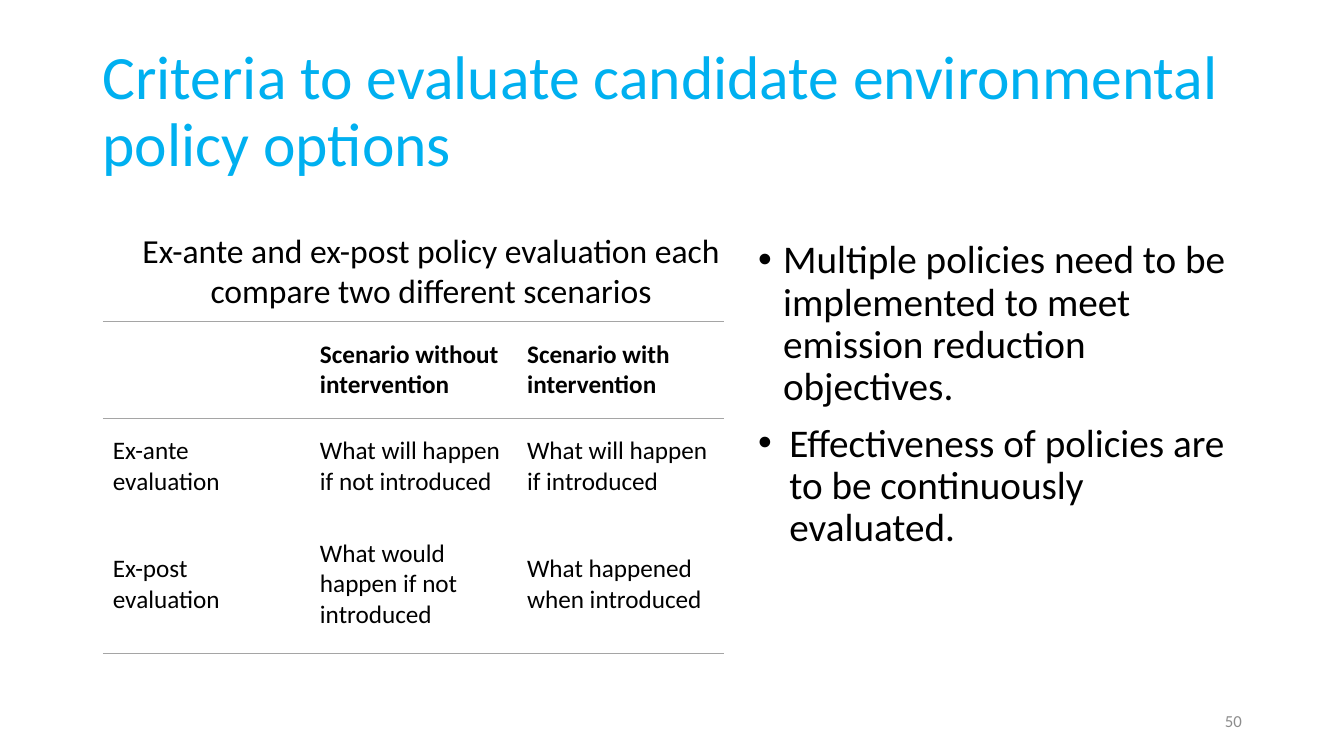
from dataclasses import dataclass

from lxml import etree
from pptx import Presentation
from pptx.dml.color import RGBColor
from pptx.enum.text import MSO_ANCHOR, MSO_AUTO_SIZE, PP_ALIGN
from pptx.oxml.ns import qn
from pptx.util import Cm, Pt

LEFT, MID, RIGHT = PP_ALIGN.LEFT, PP_ALIGN.CENTER, PP_ALIGN.RIGHT
TOP, CENTER = MSO_ANCHOR.TOP, MSO_ANCHOR.MIDDLE
FIXED = MSO_AUTO_SIZE.NONE

TITLE = "Criteria to evaluate candidate environmental policy options"
LEAD = "Ex-ante and ex-post policy evaluation each compare two different scenarios"
POINTS = [
    ("Multiple policies need to be implemented to meet emission reduction objectives.", 0.63),
    ("Effectiveness of policies are to be continuously evaluated.", 0.79),
]
GRID = [
    ("", "Scenario without intervention", "Scenario with intervention"),
    ("Ex-ante evaluation", "What will happen if not introduced", "What will happen if introduced"),
    ("Ex-post evaluation", "What would happen if not introduced", "What happened when introduced"),
]
PAGE = "50"

PLACES = {
    "title": (2.33, 1.01, 29.21, 3.68),
    "points": (18.85, 5.92, 12.67, 12.12),
    "lead": (2.33, 5.66, 17.07, 12.37),
    "page": (23.93, 17.65, 7.62, 1.02),
}
GRID_LEFT, GRID_TOP, COL_WIDTH = 2.59, 8.1, 5.22
ROW_HEIGHTS = (2.44, 2.44, 3.48)
PLAIN_STYLE = "{2D5ABB26-0587-4C30-8999-92F81FD0307C}"


@dataclass(frozen=True)
class Theme:
    font: str = "Calibri"
    blue: str = "00B0F0"
    black: str = "000000"
    gray: str = "8C8C8C"
    rule: str = "A5A5A5"
    title: int = 44
    point: int = 28
    lead: int = 24
    cell: int = 18
    page: int = 12


THEME = Theme()


def write(par, text, size, color=THEME.black, bold=False, align=LEFT,
          space=1.0, before=0, indent=0):
    par.alignment = align
    par.line_spacing = space
    par.space_before = Pt(before)
    if indent:
        props = par._p.get_or_add_pPr()
        props.set("marL", str(Cm(indent)))
        props.set("indent", str(-Cm(indent)))
    run = par.add_run()
    run.text = text
    run.font.name = THEME.font
    run.font.size = Pt(size)
    run.font.bold = bold
    run.font.color.rgb = RGBColor.from_string(color)


def frame(shape, name, anchor=TOP):
    shape.left, shape.top, shape.width, shape.height = map(Cm, PLACES[name])
    box = shape.text_frame
    box.word_wrap = True
    box.auto_size = FIXED
    box.vertical_anchor = anchor
    return box


def label(slide, name, anchor=TOP):
    return frame(slide.shapes.add_textbox(*map(Cm, PLACES[name])), name, anchor).paragraphs[0]


def rule(cell, side):
    line = etree.SubElement(cell._tc.get_or_add_tcPr(), qn("a:" + side), w=str(Pt(1)))
    fill = etree.SubElement(line, qn("a:solidFill"))
    etree.SubElement(fill, qn("a:srgbClr"), val=THEME.rule)


def add_grid(slide):
    rows, cols = len(GRID), len(GRID[0])
    table = slide.shapes.add_table(
        rows, cols, Cm(GRID_LEFT), Cm(GRID_TOP), Cm(COL_WIDTH * cols), Cm(sum(ROW_HEIGHTS))
    ).table
    table.horz_banding = False
    table._tbl.tblPr.find(qn("a:tableStyleId")).text = PLAIN_STYLE
    for col in table.columns:
        col.width = Cm(COL_WIDTH)
    for r, words in enumerate(GRID):
        table.rows[r].height = Cm(ROW_HEIGHTS[r])
        for c, text in enumerate(words):
            cell = table.cell(r, c)
            cell.vertical_anchor = CENTER
            if r == 0:
                rule(cell, "lnT")
            if r in (0, rows - 1):
                rule(cell, "lnB")
            cell.fill.background()
            if text:
                write(cell.text_frame.paragraphs[0], text, THEME.cell, bold=r == 0)


def main():
    deck = Presentation()
    deck.slide_width, deck.slide_height = Cm(33.87), Cm(19.05)
    slide = deck.slides.add_slide(deck.slide_layouts[1])

    title = frame(slide.shapes.title, "title", CENTER)
    write(title.paragraphs[0], TITLE, THEME.title, color=THEME.blue, space=0.9)

    body = frame(slide.placeholders[1], "points")
    for i, (text, indent) in enumerate(POINTS):
        par = body.add_paragraph() if i else body.paragraphs[0]
        write(par, text, THEME.point, space=0.9, before=10, indent=indent)

    add_grid(slide)
    write(label(slide, "lead"), LEAD, THEME.lead, align=MID)
    write(label(slide, "page", CENTER), PAGE, THEME.page, color=THEME.gray, align=RIGHT)
    deck.save("out.pptx")


if __name__ == "__main__":
    main()
